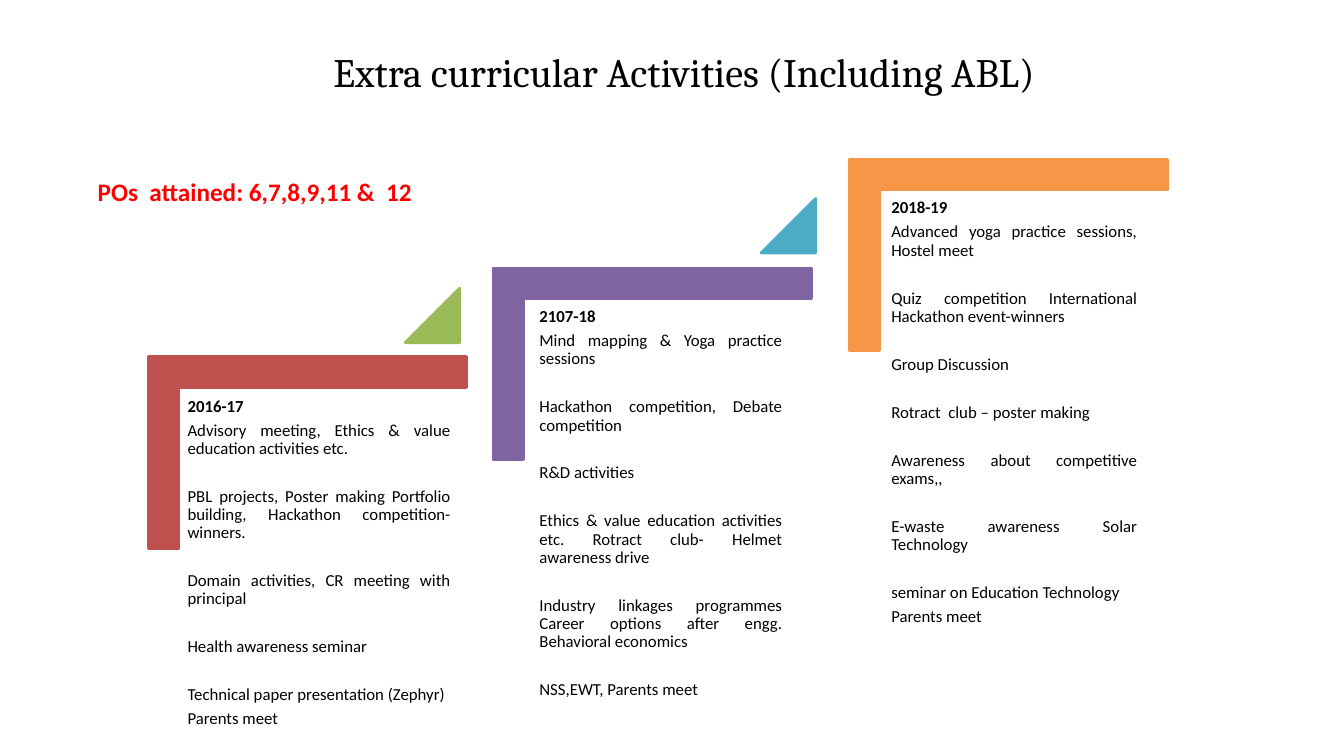
from pptx import Presentation
from pptx.dml.color import RGBColor
from pptx.enum.shapes import MSO_SHAPE as Shape
from pptx.enum.text import MSO_ANCHOR as Anchor, PP_ALIGN as Align
from pptx.util import Inches, Pt

BAR = 0.161
NEAR, FAR = 4.2, 21.3

# Each year: corner place, text box, colour, heading, blocks of lines
YEARS = [
    ((2.1, 2.91), (1.81, 3.9, 2.71, 2.47), "C0504D", "2016-17", [
        ["Advisory meeting, Ethics & value education activities etc."],
        ["PBL projects, Poster making Portfolio building, "
         "Hackathon competition-winners."],
        ["Domain activities, CR meeting with principal"],
        ["Health awareness seminar"],
        ["Technical paper presentation (Zephyr)", "Parents meet"],
    ]),
    ((5.52, 2.03), (5.3, 3.01, 2.51, 2.5), "8064A2", "2107-18", [
        ["Mind mapping & Yoga practice sessions"],
        ["Hackathon competition, Debate competition"],
        ["R&D activities"],
        ["Ethics & value education activities etc. "
         "Rotract club- Helmet awareness drive"],
        ["Industry linkages programmes Career options after engg. "
         "Behavioral economics"],
        ["NSS,EWT, Parents meet"],
    ]),
    ((9.05, 0.95), (8.79, 1.93, 2.54, 2.5), "F79646", "2018-19", [
        ["Advanced yoga practice sessions, Hostel meet"],
        ["Quiz competition International Hackathon event-winners"],
        ["Group Discussion"],
        ["Rotract  club – poster making"],
        ["Awareness about competitive exams,,"],
        ["E-waste awareness Solar Technology"],
        ["seminar on Education Technology", "Parents meet"],
    ]),
]
STEPS = [((4.02, 2.86), "9BBB59"), ((7.55, 1.97), "4BACC6")]


def color(code):
    return RGBColor.from_string(code)


def write(para, text, size=12, font="Calibri", fill="000000", bold=False,
          align=Align.LEFT, line=None, after=0):
    para.alignment = align
    para.line_spacing = line
    para.space_after = Pt(after)
    run = para.add_run()
    run.text = text
    run.font.size = Pt(size)
    run.font.name = font
    run.font.bold = bold
    run.font.color.rgb = color(fill)


def frame(slide, place, inset=(0.1, 0.05), anchor=Anchor.TOP):
    """Add a wrapping text box and return its text frame."""
    body = slide.shapes.add_textbox(*map(Inches, place)).text_frame
    body.word_wrap = True
    body.vertical_anchor = anchor
    body.margin_left = body.margin_right = Inches(inset[0])
    body.margin_top = body.margin_bottom = Inches(inset[1])
    return body


def block(slide, kind, place, fill, adjust, turn=0):
    shape = slide.shapes.add_shape(kind, *map(Inches, place))
    shape.shadow.inherit = False
    shape.rotation = turn
    for i, value in enumerate(adjust):
        shape.adjustments[i] = value
    shape.fill.solid()
    shape.fill.fore_color.rgb = color(fill)
    shape.line.color.rgb = color(fill)
    shape.line.width = Pt(2)


def column(slide, place, head, groups):
    """Write a year and its activities, with a wide gap after each group."""
    body = frame(slide, place, inset=(0.05, 0.05))
    write(body.paragraphs[0], head, bold=True, line=0.9, after=NEAR)
    for group in groups:
        for i, text in enumerate(group, 1):
            gap = FAR if i == len(group) else NEAR
            write(body.add_paragraph(), text, align=Align.JUSTIFY,
                  line=0.9, after=gap)


def main():
    deck = Presentation()
    deck.slide_width, deck.slide_height = Inches(13.33), Inches(7.5)
    slide = deck.slides.add_slide(deck.slide_layouts[6])

    title = frame(slide, (3, 0.34, 7.57, 0.73), anchor=Anchor.MIDDLE)
    write(title.paragraphs[0], "Extra curricular Activities (Including ABL)",
          size=28.8, font="Cambria", align=Align.CENTER)

    for spot, place, fill, head, groups in YEARS:
        block(slide, Shape.CORNER, (*spot, 1.9, 3.16), fill, (BAR, BAR), 90)
        column(slide, place, head, groups)
    for spot, fill in STEPS:
        block(slide, Shape.ISOSCELES_TRIANGLE, (*spot, 0.54, 0.54), fill, (1,))

    note = frame(slide, (0.87, 1.7, 3.69, 0.4))
    write(note.paragraphs[0], "POs  attained: 6,7,8,9,11 &  12",
          size=18, fill="FF0000", bold=True)
    deck.save("out.pptx")


if __name__ == "__main__":
    main()
